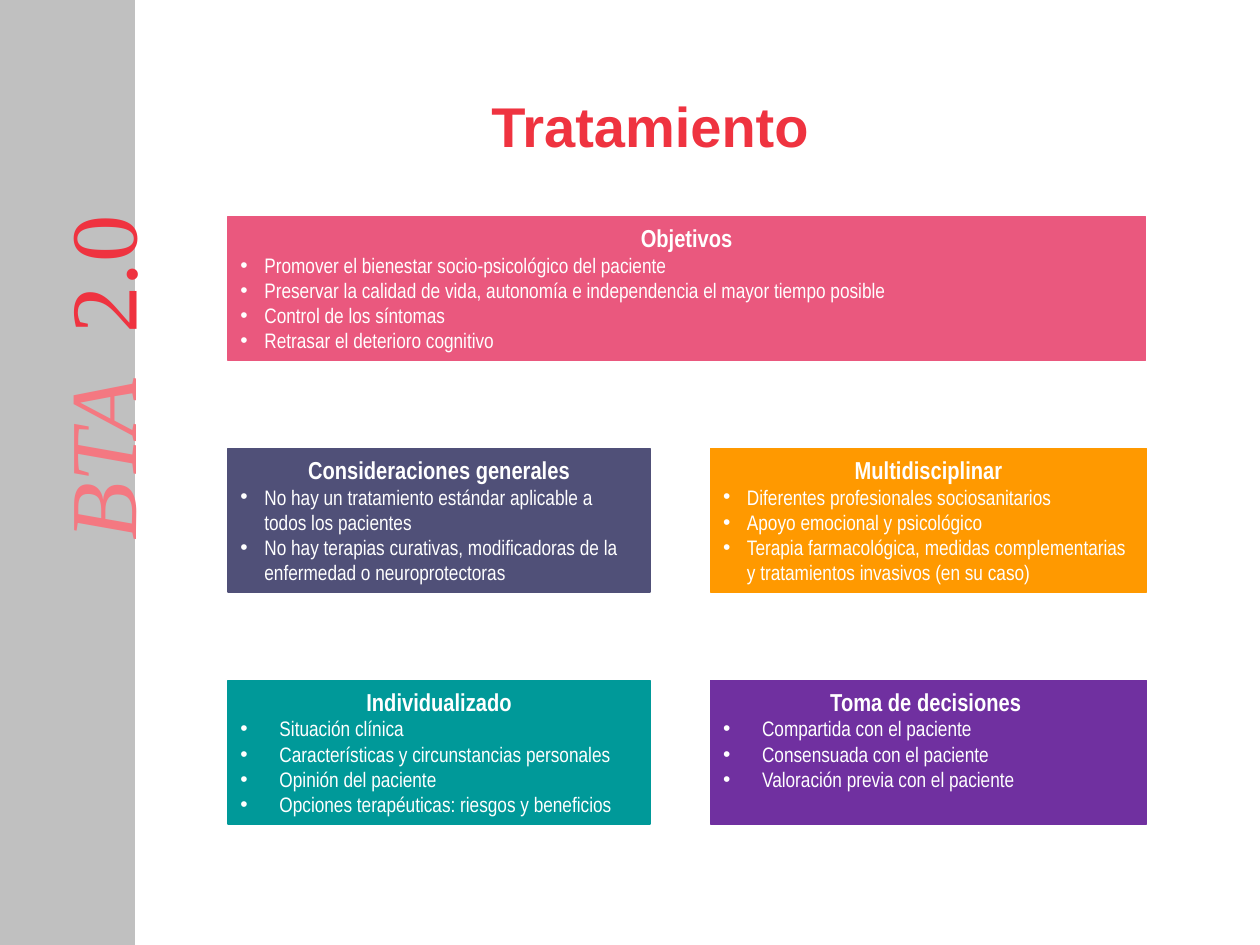
from lxml.etree import SubElement
from pptx import Presentation
from pptx.dml.color import RGBColor
from pptx.enum.shapes import MSO_SHAPE
from pptx.enum.text import MSO_ANCHOR, PP_ALIGN
from pptx.oxml.ns import qn
from pptx.util import Inches, Pt

COLORS = {
    "band": "C0C0C0", "red": "EF3340", "salmon": "F47881", "white": "FFFFFF",
    "pink": "EA587E", "orange": "FF9900", "slate": "505078",
    "teal": "009999", "purple": "7030A0",
}

# Card grid
LEFT, RIGHT = 1.81, 5.64
LEFT_WIDTH, RIGHT_WIDTH, FULL_WIDTH = 3.35, 3.46, 7.28
ROWS = [1.72, 3.56, 5.4]
CARD_HEIGHT = 1.14
NARROW, WIDE = 0.19, 0.31

# Left, top, width, colour, bullet indent, heading, items
CARDS = [
    (LEFT, ROWS[0], FULL_WIDTH, "pink", NARROW, "Objetivos", [
        "Promover el bienestar socio-psicológico del paciente",
        "Preservar la calidad de vida, autonomía e independencia el mayor tiempo posible",
        "Control de los síntomas",
        "Retrasar el deterioro cognitivo"]),
    (RIGHT, ROWS[1], RIGHT_WIDTH, "orange", NARROW, "Multidisciplinar", [
        "Diferentes profesionales sociosanitarios",
        "Apoyo emocional y psicológico",
        "Terapia farmacológica, medidas complementarias y tratamientos invasivos (en su caso)"]),
    (LEFT, ROWS[1], LEFT_WIDTH, "slate", NARROW, "Consideraciones generales", [
        "No hay un tratamiento estándar aplicable a todos los pacientes",
        "No hay terapias curativas, modificadoras de la enfermedad o neuroprotectoras"]),
    (LEFT, ROWS[2], LEFT_WIDTH, "teal", WIDE, "Individualizado", [
        "Situación clínica",
        "Características y circunstancias personales",
        "Opinión del paciente",
        "Opciones terapéuticas: riesgos y beneficios"]),
    (RIGHT, ROWS[2], RIGHT_WIDTH, "purple", WIDE, "Toma de decisiones ", [
        "Compartida con el paciente",
        "Consensuada con el paciente",
        "Valoración previa con el paciente"]),
]


def rgb(name):
    return RGBColor.from_string(COLORS[name])


def add_run(paragraph, text, color, **formats):
    run = paragraph.add_run()
    run.text = text
    run.font.color.rgb = rgb(color)
    for name, value in formats.items():
        setattr(run.font, name, value)


def add_box(slide, left, top, width, height, color):
    shape = slide.shapes.add_shape(
        MSO_SHAPE.RECTANGLE, Inches(left), Inches(top), Inches(width), Inches(height))
    shape.shadow.inherit = False
    shape.fill.solid()
    shape.fill.fore_color.rgb = rgb(color)
    shape.line.color.rgb = rgb(color)
    shape.line.width = Pt(0.75)
    return shape


def set_bullet(paragraph, indent):
    properties = paragraph._p.get_or_add_pPr()
    properties.set("marL", str(Inches(indent)))
    properties.set("indent", str(-Inches(indent)))
    SubElement(properties, qn("a:buFont"), typeface="Arial")
    SubElement(properties, qn("a:buChar"), char="•")


def add_card(slide, left, top, width, color, indent, heading, items):
    frame = add_box(slide, left, top, width, CARD_HEIGHT, color).text_frame
    frame.word_wrap = True
    frame.vertical_anchor = MSO_ANCHOR.TOP
    paragraph = frame.paragraphs[0]
    paragraph.alignment = PP_ALIGN.CENTER
    add_run(paragraph, heading, "white", name="Arial Narrow", size=Pt(14), bold=True)
    for item in items:
        paragraph = frame.add_paragraph()
        paragraph.alignment = PP_ALIGN.LEFT
        set_bullet(paragraph, indent)
        add_run(paragraph, item, "white", name="Arial Narrow", size=Pt(12), bold=False)


def add_side_band(slide):
    add_box(slide, 0, 0, 1.07, 7.5, "band")
    label = slide.shapes.add_textbox(Inches(-0.77), Inches(2.12), Inches(3.23), Inches(1.3))
    label.rotation = 270
    frame = label.text_frame
    frame.word_wrap = True
    frame.margin_top = Inches(0.14)
    paragraph = frame.paragraphs[0]
    for text, color, italic in [("BTA  ", "salmon", True), ("2.0", "red", False)]:
        add_run(paragraph, text, color, name="Times New Roman", size=Pt(54), italic=italic)


def set_title(slide, text):
    title = slide.shapes.title
    place = {"left": 2.64, "top": 0.62, "width": 5.04, "height": 0.75}
    for name, value in place.items():
        setattr(title, name, Inches(value))
    title.text_frame.vertical_anchor = MSO_ANCHOR.MIDDLE
    paragraph = title.text_frame.paragraphs[0]
    paragraph.alignment = PP_ALIGN.CENTER
    add_run(paragraph, text, "red", name="Arial", size=Pt(32), bold=True)


def main():
    presentation = Presentation()
    presentation.slide_width = Inches(10)
    presentation.slide_height = Inches(7.5)
    slide = presentation.slides.add_slide(presentation.slide_layouts[5])

    add_side_band(slide)
    set_title(slide, "Tratamiento")
    for card in CARDS:
        add_card(slide, *card)

    presentation.save("out.pptx")


if __name__ == "__main__":
    main()
